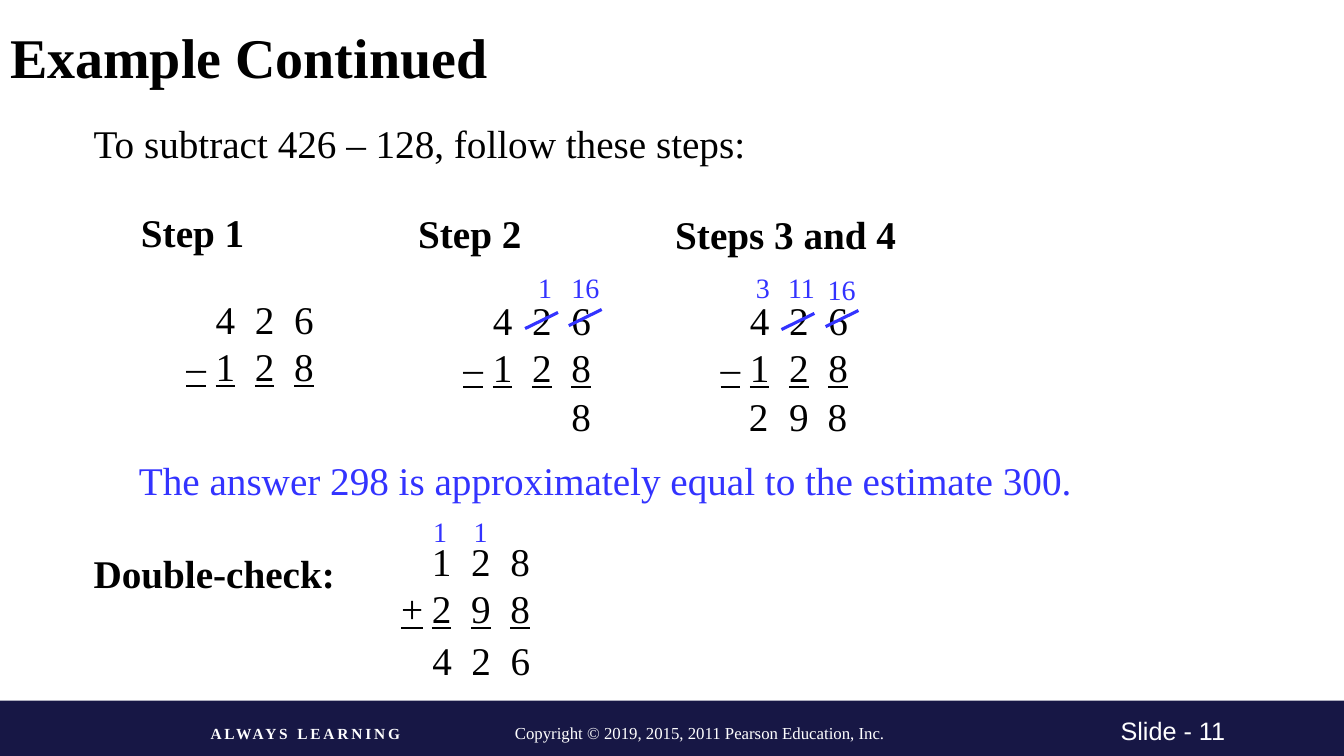
from dataclasses import dataclass

from lxml import etree
from pptx import Presentation
from pptx.dml.color import RGBColor
from pptx.enum.shapes import MSO_CONNECTOR, MSO_SHAPE
from pptx.enum.text import MSO_ANCHOR, PP_ALIGN
from pptx.oxml.ns import qn
from pptx.slide import Slide
from pptx.text.text import Font
from pptx.util import Pt

COLORS = {"ink": "000000", "mark": "3333FF", "band": "171745", "light": "FFFFFF"}
SERIF = "Times New Roman"
DIGIT_PITCH = 28


@dataclass(frozen=True)
class Label:
    text: str
    left: float
    top: float
    width: float
    height: float = 41
    size: float = 28
    color: str = "ink"
    bold: bool = False
    font: str = SERIF
    spacing: float = 0


@dataclass(frozen=True)
class Sum:
    """Two stacked numbers, the lower one underlined after its sign."""
    upper: str
    sign: str
    lower: str
    left: float
    top: float
    height: float = 89.3
    first_digit: float = 21


@dataclass(frozen=True)
class Strike:
    left: float
    bottom: float


def digit(text: str, left: float, top: float = 276.5) -> Label:
    return Label(text, left, top, 29)


def regrouped(text: str, left: float, top: float) -> Label:
    return Label(text, left, top, 34.5 if len(text) > 1 else 24.5, 31.5, 20, "mark")


LABELS = [
    Label("To subtract 426 – 128, follow these steps:", 59.75, 81.5, 500),
    Label("Step 1", 93.6, 145.5, 95, bold=True),
    Label("Step 2", 291.6, 146.2, 95, bold=True),
    Label("Steps 3 and 4", 475.2, 146.5, 217.5, bold=True),
    regrouped("1", 377.3, 190),
    regrouped("16", 401, 190),
    regrouped("3", 532.8, 189.4),
    regrouped("11", 555.8, 189.4),
    regrouped("16", 584, 191),
    digit("8", 401),
    digit("2", 527.8),
    digit("9", 556.5),
    digit("8", 584),
    Label("The answer 298 is approximately equal to the estimate 300.",
          92.2, 322.6, 787, color="mark"),
    Label("Double-check:", 59.75, 388.8, 199.5, bold=True),
    regrouped("1", 302.4, 363.6),
    regrouped("1", 331.2, 363.6),
]
FOOTER = [
    Label("ALWAYS LEARNING", 143.3, 514, 222.5, 21, 11, "light", True, spacing=2),
    Label("Copyright © 2019, 2015, 2011 Pearson Education, Inc.",
          360.7, 512.6, 373.7, 21.6, 12, "light"),
    Label("Slide - 11", 793.4, 507.6, 144, 29, 18, "light", font="Arial"),
]
SUMS = [
    Sum("426", "–", "128", 126, 207.4),
    Sum("426", "–", "128", 324, 208.1),
    Sum("426", "–", "128", 507.6, 208.1),
    Sum("128", "+", "298", 279.4, 380.2, 74.9, 22),
]
STRIKES = [Strike(375.1, 234.7), Strike(406.3, 232.6),
           Strike(558.2, 235.4), Strike(589.7, 233.3)]


def style(font: Font, label: Label) -> None:
    font.name = label.font
    font.size = Pt(label.size)
    font.bold = label.bold
    font.color.rgb = RGBColor.from_string(COLORS[label.color])


def add_label(slide: Slide, label: Label, stops: tuple[float, ...] = ()):
    """Add a text box, with tab stops if given, and return its paragraph."""
    box = slide.shapes.add_textbox(Pt(label.left), Pt(label.top),
                                   Pt(label.width), Pt(label.height))
    box.text_frame.word_wrap = True
    paragraph = box.text_frame.paragraphs[0]
    paragraph.text = label.text
    if stops:
        tabs = etree.SubElement(paragraph._p.get_or_add_pPr(), qn("a:tabLst"))
        for stop in stops:
            etree.SubElement(tabs, qn("a:tab"), pos=str(Pt(stop)), algn="l")
    for run in paragraph.runs:
        style(run.font, label)
        if label.spacing:
            run.font._element.set("spc", str(int(label.spacing * 100)))
    return paragraph


def add_sum(slide: Slide, total: Sum) -> None:
    upper, lower = "\t".join(total.upper), "\t".join(total.lower)
    stops = tuple(total.first_digit + DIGIT_PITCH * place for place in range(3))
    label = Label(f"\t{upper}\v{total.sign}\t{lower}", total.left, total.top,
                  155.5, total.height)
    add_label(slide, label, stops).runs[-1].font.underline = True


def add_strike(slide: Slide, strike: Strike) -> None:
    line = slide.shapes.add_connector(
        MSO_CONNECTOR.STRAIGHT, Pt(strike.left), Pt(strike.bottom),
        Pt(strike.left + 23.5), Pt(strike.bottom - 11.5))
    line.line.color.rgb = RGBColor.from_string(COLORS["mark"])
    line.line.width = Pt(2.25)
    etree.SubElement(line._element.spPr, qn("a:effectLst"))


def add_title(slide: Slide) -> None:
    title = slide.shapes.title
    title.left, title.top, title.width, title.height = Pt(0), Pt(6.5), Pt(960), Pt(75.6)
    title.text_frame.text = "Example Continued"
    title.text_frame.vertical_anchor = MSO_ANCHOR.MIDDLE
    paragraph = title.text_frame.paragraphs[0]
    paragraph.alignment = PP_ALIGN.LEFT
    paragraph.line_spacing = 0.8
    style(paragraph.runs[0].font, Label("", 0, 0, 0, size=40, bold=True))


def add_footer_band(slide: Slide) -> None:
    band = slide.shapes.add_shape(MSO_SHAPE.RECTANGLE, Pt(0), Pt(500.4), Pt(960), Pt(39.6))
    band.fill.solid()
    band.fill.fore_color.rgb = RGBColor.from_string(COLORS["band"])
    band.line.fill.background()
    band.shadow.inherit = False


def main() -> None:
    deck = Presentation()
    deck.slide_width, deck.slide_height = Pt(960), Pt(540)
    slide = deck.slides.add_slide(deck.slide_layouts[5])
    add_title(slide)
    add_footer_band(slide)
    for label in FOOTER + LABELS:
        add_label(slide, label)
    for total in SUMS:
        add_sum(slide, total)
    answer = Label("4\t2\t6", 301.7, 450.7, 110)
    add_label(slide, answer, (DIGIT_PITCH, 2 * DIGIT_PITCH))
    for strike in STRIKES:
        add_strike(slide, strike)
    deck.save("out.pptx")


if __name__ == "__main__":
    main()
